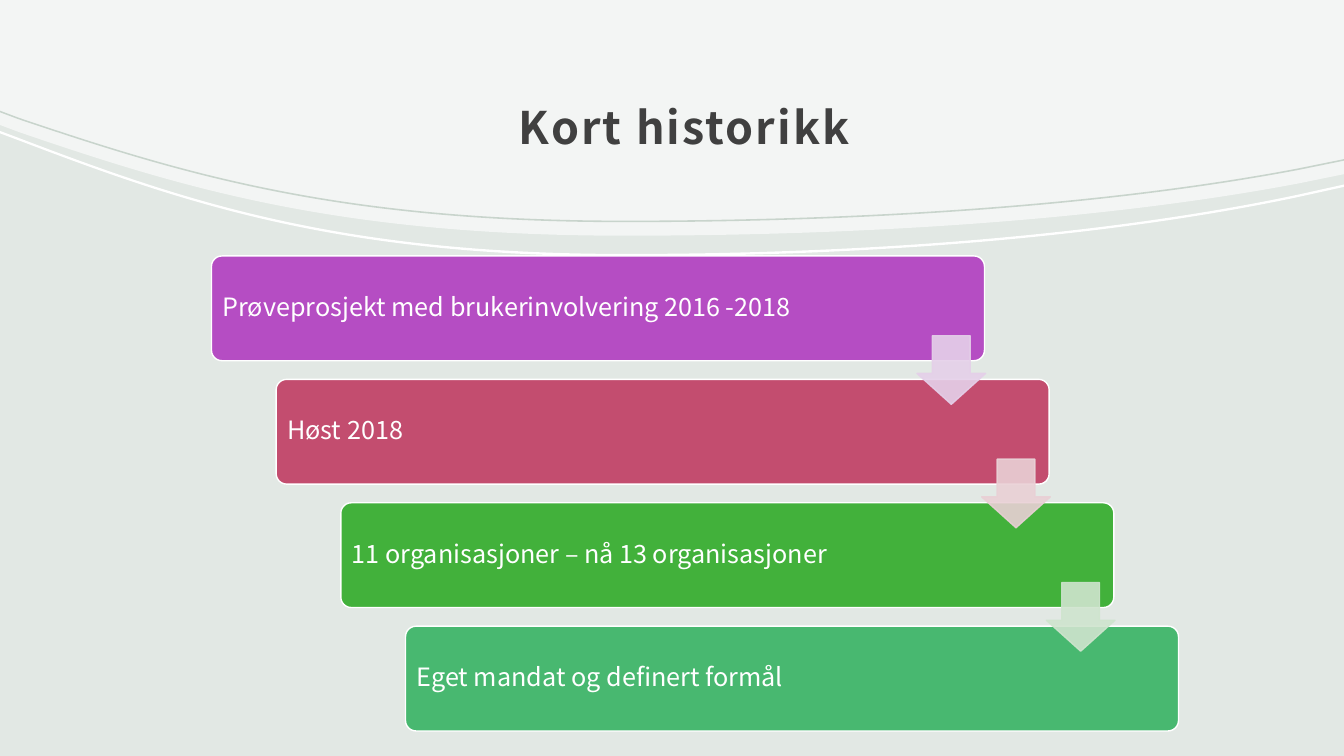
"""Build the "Kort historikk" slide: a staircase of four milestones under a curved header."""
from dataclasses import dataclass

import pptx
import pptx.dml.color
import pptx.dml.fill
import pptx.enum.shapes
import pptx.enum.text
import pptx.oxml
import pptx.oxml.ns
import pptx.shapes.autoshape
import pptx.slide
import pptx.text.text
import pptx.util
from pptx.util import Cm

SLIDE_WIDTH, SLIDE_HEIGHT = 33.87, 19.05
FONT = "Noto Sans CJK JP"
WHITE = "FFFFFF"
CURVE_X = (0, 0.48, 4.55, 8.46, 15.75, 22.23, 28.17, 32.74, SLIDE_WIDTH)
CURVE_STARTS = (1, 4, 10, 13)
POINTS_PER_CM = 1000
STEP_LEFT, STEP_TOP = 5.33, 6.45
STEP_RIGHT, STEP_DOWN = 1.63, 3.11
STEP_WIDTH, STEP_HEIGHT = 19.48, 2.64
ARROW_RIGHT, ARROW_DOWN, ARROW_SIZE = 17.78, 2.01, 1.73


@dataclass(frozen=True)
class Band:
    heights: tuple[float, ...]
    color: str
    thickness: float | None = None
    opacity: int = 100


@dataclass(frozen=True)
class Step:
    text: str
    color: str
    arrow_color: str | None = None


PANEL = Band((3.15, 3.33, 4.72, 5.94, 5.94, 5.94, 5.49, 4.62, 4.39), WHITE, opacity=60)
WHITE_LINE = Band((3.3, 3.48, 5.03, 6.4, 6.4, 6.4, 5.87, 4.9, 4.65), WHITE, thickness=0.06)
GRAY_LINE = Band((2.79, 2.97, 4.34, 5.56, 5.56, 5.56, 5.11, 4.24, 4.01), "C8D4CC", thickness=0.04)
STEPS = (
    Step("Prøveprosjekt med brukerinvolvering 2016 -2018", "B54DC3", "E5D0E9"),
    Step("Høst 2018", "C34D6F", "E9D0D5"),
    Step("11 organisasjoner – nå 13 organisasjoner", "42B13B", "CFE4CE"),
    Step("Eget mandat og definert formål", "48B870"),
)


def paint(fill: pptx.dml.fill.FillFormat, color: str, opacity: int = 100) -> None:
    """Fill with a solid hex colour at an opacity in percent."""
    fill.solid()
    fill.fore_color.rgb = pptx.dml.color.RGBColor.from_string(color)
    if opacity < 100:
        color_element = fill._xPr.find(".//" + pptx.oxml.ns.qn("a:srgbClr"))
        alpha = pptx.oxml.parse_xml(
            f'<a:alpha {pptx.oxml.ns.nsdecls("a")} val="{opacity * 1000}"/>'
        )
        color_element.append(alpha)


def bend(shape: pptx.shapes.autoshape.Shape) -> None:
    """Turn each run of three control segments into one cubic curve."""
    segments = list(shape._element.iter(pptx.oxml.ns.qn("a:lnTo")))
    for start in CURVE_STARTS:
        controls = segments[start:start + 3]
        if len(controls) < 3:
            continue
        curve = pptx.oxml.parse_xml(f'<a:cubicBezTo {pptx.oxml.ns.nsdecls("a")}/>')
        controls[0].addprevious(curve)
        for segment in controls:
            curve.append(segment[0])
            segment.getparent().remove(segment)


def add_band(slide: pptx.slide.Slide, band: Band) -> None:
    """Draw a band along a curve, reaching the top edge if it has no thickness."""
    controls = list(zip(CURVE_X, band.heights))
    if band.thickness is None:
        opposite = [(SLIDE_WIDTH, 0), (0, 0)]
    else:
        opposite = [(x, y + band.thickness) for x, y in reversed(controls)]
    outline = [(x * POINTS_PER_CM, y * POINTS_PER_CM) for x, y in controls + opposite]
    builder = slide.shapes.build_freeform(*outline[0], scale=Cm(1) / POINTS_PER_CM)
    builder.add_line_segments(outline[1:], close=True)
    shape = builder.convert_to_shape()
    bend(shape)
    shape.shadow.inherit = False
    paint(shape.fill, band.color, band.opacity)
    shape.line.fill.background()


def style_text(
    frame: pptx.text.text.TextFrame, text: str, size: int, color: str, spacing: float
) -> pptx.text.text._Paragraph:
    """Write one vertically centred paragraph."""
    frame.word_wrap = True
    frame.vertical_anchor = pptx.enum.text.MSO_ANCHOR.MIDDLE
    paragraph = frame.paragraphs[0]
    paragraph.text = text
    paragraph.line_spacing = spacing
    paragraph.font.name = FONT
    paragraph.font.size = pptx.util.Pt(size)
    paint(paragraph.font.fill, color)
    return paragraph


def add_title(slide: pptx.slide.Slide) -> None:
    """Add the centred, letter-spaced heading."""
    frame = slide.shapes.add_textbox(Cm(3.7), Cm(1.5), Cm(27.1), Cm(2.9)).text_frame
    frame.margin_left = frame.margin_right = frame.margin_top = Cm(0.3)
    frame.margin_bottom = Cm(0.25)
    paragraph = style_text(frame, "Kort historikk", 32, "404040", 1.3)
    paragraph.alignment = pptx.enum.text.PP_ALIGN.CENTER
    paragraph.font.bold = True
    paragraph.runs[0]._r.get_or_add_rPr().set("spc", "150")


def add_block(
    slide: pptx.slide.Slide,
    kind: pptx.enum.shapes.MSO_SHAPE,
    box: tuple[float, float, float, float],
    adjustments: tuple[float, ...],
    color: str,
    line_color: str,
    opacity: int = 100,
) -> pptx.shapes.autoshape.Shape:
    """Add a filled preset shape with a one-point outline."""
    shape = slide.shapes.add_shape(kind, *map(Cm, box))
    for index, value in enumerate(adjustments):
        shape.adjustments[index] = value
    shape.shadow.inherit = False
    paint(shape.fill, color, opacity)
    shape.line.width = pptx.util.Pt(1)
    paint(shape.line.fill, line_color, opacity)
    return shape


def add_step(slide: pptx.slide.Slide, step: Step, left: float, top: float) -> None:
    """Add one milestone bar with its text."""
    box = (left, top, STEP_WIDTH, STEP_HEIGHT)
    kind = pptx.enum.shapes.MSO_SHAPE.ROUNDED_RECTANGLE
    frame = add_block(slide, kind, box, (0.1,), step.color, WHITE).text_frame
    frame.margin_left = frame.margin_right = Cm(0.2)
    frame.margin_top = frame.margin_bottom = Cm(0.2)
    paragraph = style_text(frame, step.text, 18, WHITE, 0.9)
    paragraph.alignment = pptx.enum.text.PP_ALIGN.LEFT


def add_arrow(slide: pptx.slide.Slide, color: str, left: float, top: float) -> None:
    """Add the arrow leading from a bar to the next one."""
    box = (left + ARROW_RIGHT, top + ARROW_DOWN, ARROW_SIZE, ARROW_SIZE)
    kind = pptx.enum.shapes.MSO_SHAPE.DOWN_ARROW
    add_block(slide, kind, box, (0.55, 0.45), color, color, opacity=90)


def main() -> None:
    """Build and save the presentation."""
    presentation = pptx.Presentation()
    presentation.slide_width = Cm(SLIDE_WIDTH)
    presentation.slide_height = Cm(SLIDE_HEIGHT)
    slide = presentation.slides.add_slide(presentation.slide_layouts[6])
    paint(slide.background.fill, "E2E8E4")
    add_band(slide, PANEL)
    add_band(slide, WHITE_LINE)
    add_title(slide)
    add_band(slide, GRAY_LINE)
    places = [
        (STEP_LEFT + index * STEP_RIGHT, STEP_TOP + index * STEP_DOWN)
        for index in range(len(STEPS))
    ]
    for step, place in zip(STEPS, places):
        add_step(slide, step, *place)
    for step, place in zip(STEPS, places):
        if step.arrow_color:
            add_arrow(slide, step.arrow_color, *place)
    presentation.save("out.pptx")


if __name__ == "__main__":
    main()
